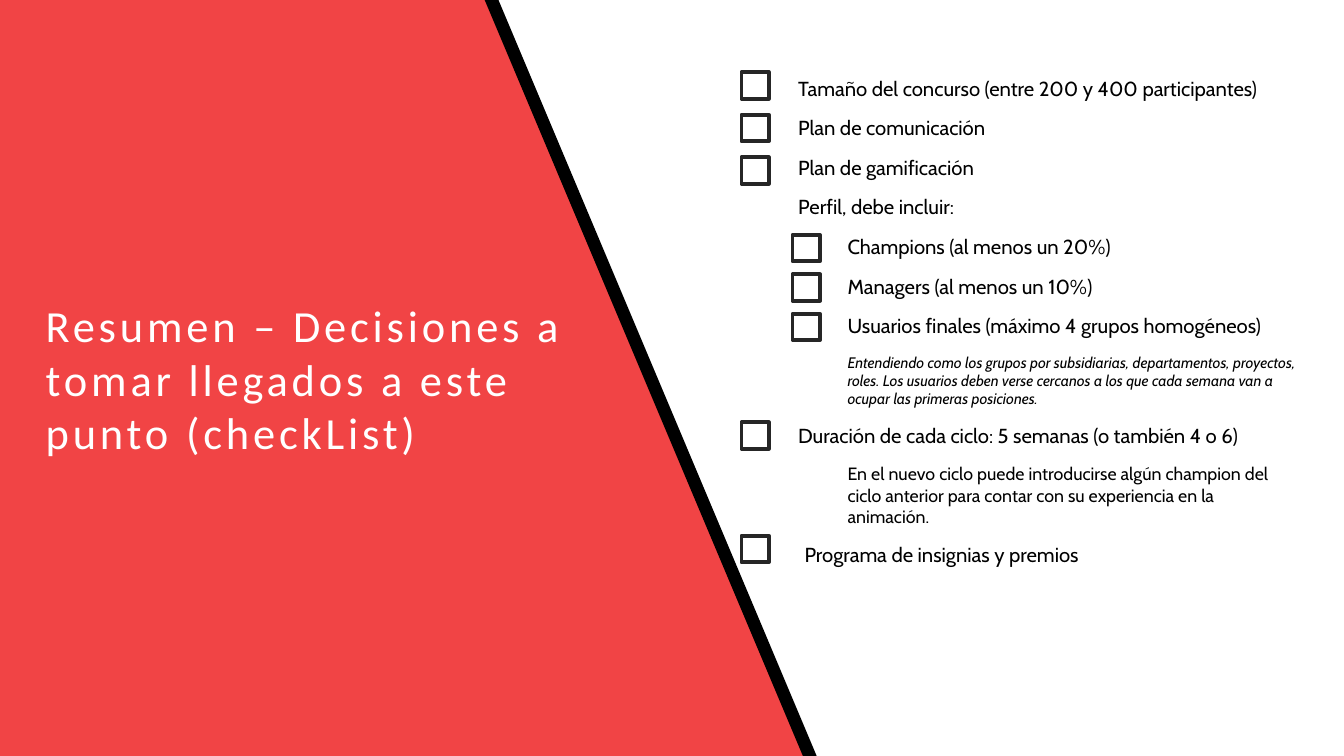
"""Builds the checklist summary slide."""
from dataclasses import dataclass

from pptx import Presentation
from pptx.dml.color import RGBColor
from pptx.enum.shapes import MSO_CONNECTOR, MSO_SHAPE
from pptx.enum.text import MSO_ANCHOR
from pptx.oxml.ns import qn
from pptx.util import Pt


@dataclass(frozen=True)
class Theme:
    """Colours, fonts and type sizes of the slide."""
    red: str = "F14445"
    black: str = "000000"
    white: str = "FFFFFF"
    edge: str = "262626"
    head: str = "Calibri"
    body: str = "Cabin"
    title: int = 35
    item: int = 16
    note: int = 14
    small: int = 12


def write(para, text, *, font, size, color, italic=False, track=0,
          indent=0, before=0, after=0):
    """Fill a paragraph with one formatted run."""
    para.space_before, para.space_after = Pt(before), Pt(after)
    props = para._p.get_or_add_pPr()
    props.set("marL", str(Pt(indent)))
    props.set("indent", "0")
    run = para.add_run()
    run.text = text
    run.font.name, run.font.size = font, Pt(size)
    run.font.italic = italic
    run.font.color.rgb = RGBColor.from_string(color)
    if track:
        run.font._element.set("spc", str(track * 100))


class Deck:
    """Holds the theme and the current slide."""

    def __init__(self, theme, wide, high):
        """Start a deck with one blank slide."""
        self.theme = theme
        self.prs = Presentation()
        self.prs.slide_width, self.prs.slide_height = Pt(wide), Pt(high)
        self.slide = self.prs.slides.add_slide(self.prs.slide_layouts[6])

    def block(self, kind, left, top, wide, high, fill=None, edge=None):
        """Add a preset shape with a fill or an outline."""
        shape = self.slide.shapes.add_shape(
            kind, Pt(left), Pt(top), Pt(wide), Pt(high))
        shape.shadow.inherit = False
        if fill:
            shape.fill.solid()
            shape.fill.fore_color.rgb = RGBColor.from_string(fill)
        else:
            shape.fill.background()
        if edge:
            shape.line.color.rgb = RGBColor.from_string(edge)
            shape.line.width = Pt(3)
        else:
            shape.line.fill.background()

    def line(self, start, end, color, width):
        """Add a straight line between two points."""
        rule = self.slide.shapes.add_connector(
            MSO_CONNECTOR.STRAIGHT, *map(Pt, start + end))
        rule.line.color.rgb = RGBColor.from_string(color)
        rule.line.width = Pt(width)
        props = rule._element.spPr
        props.append(props.makeelement(qn("a:effectLst"), {}))

    def text(self, left, top, wide, high, anchor, items):
        """Add a text box with one paragraph per item."""
        frame = self.slide.shapes.add_textbox(
            Pt(left), Pt(top), Pt(wide), Pt(high)).text_frame
        frame.word_wrap = True
        frame.vertical_anchor = anchor
        frame.margin_left = frame.margin_right = Pt(7.92)
        frame.margin_top = frame.margin_bottom = Pt(3.6)
        for num, (words, style) in enumerate(items):
            para = frame.add_paragraph() if num else frame.paragraphs[0]
            write(para, words, **style)

    def check(self, left, top):
        """Add an empty check box."""
        self.block(MSO_SHAPE.RECTANGLE, left, top, 21.6, 20.9,
                   edge=self.theme.edge)

    def list(self, left, top, wide, high, rows):
        """Add the checklist text from words and changes of style."""
        look = self.theme
        items = []
        for num, (words, change) in enumerate(rows):
            style = dict(font=look.body, size=look.item, color=look.black,
                         before=6 if num else 0, after=6)
            items.append((words, style | change))
        self.text(left, top, wide, high, MSO_ANCHOR.TOP, items)


def main():
    """Build and save the slide."""
    look = Theme()
    wide, high, bend, foot = 1058.4, 595.44, 385.92, 638.64
    deck = Deck(look, wide, high)
    deck.block(MSO_SHAPE.RECTANGLE, 0, 0, bend, high, fill=look.red)
    deck.block(MSO_SHAPE.RIGHT_TRIANGLE, bend, 0, foot - bend, high,
               fill=look.red)
    deck.line((bend, -2.88), (foot, 597.6), look.black, 10)

    sub = dict(indent=38.88)
    deck.list(620.64, 56.16, 409.68, 481.68, [
        ("Tamaño del concurso (entre 200 y 400 participantes)", {}),
        ("Plan de comunicación", {}),
        ("Plan de gamificación", {}),
        ("Perfil, debe incluir:", {}),
        ("Champions (al menos un 20%)", sub),
        ("Managers (al menos un 10%)", sub),
        ("Usuarios finales (máximo 4 grupos homogéneos)", sub),
        ("Entendiendo como los grupos por subsidiarias, departamentos, "
         "proyectos, roles. Los usuarios deben verse cercanos a los que "
         "cada semana van a ocupar las primeras posiciones.",
         sub | dict(size=look.small, italic=True)),
        ("Duración de cada ciclo: 5 semanas (o también 4 o 6)", {}),
        ("En el nuevo ciclo puede introducirse algún champion del ciclo "
         "anterior para contar con su experiencia en la animación.",
         sub | dict(size=look.note)),
        ("Programa de insignias y premios", dict(indent=5.04)),
    ])
    deck.text(28.08, 17.28, 467.28, 561.6, MSO_ANCHOR.MIDDLE, [
        ("Resumen – Decisiones a tomar llegados a este punto (checkList)",
         dict(font=look.head, size=look.title, color=look.white, track=3)),
    ])

    plans = [56.8 + 33.5 * num for num in range(3)]
    for top in plans + [332.6, 421.9]:
        deck.check(583.9, top)
    for num in range(3):
        deck.check(624.2, 185 + 31 * num)
    deck.prs.save("out.pptx")


if __name__ == "__main__":
    main()
